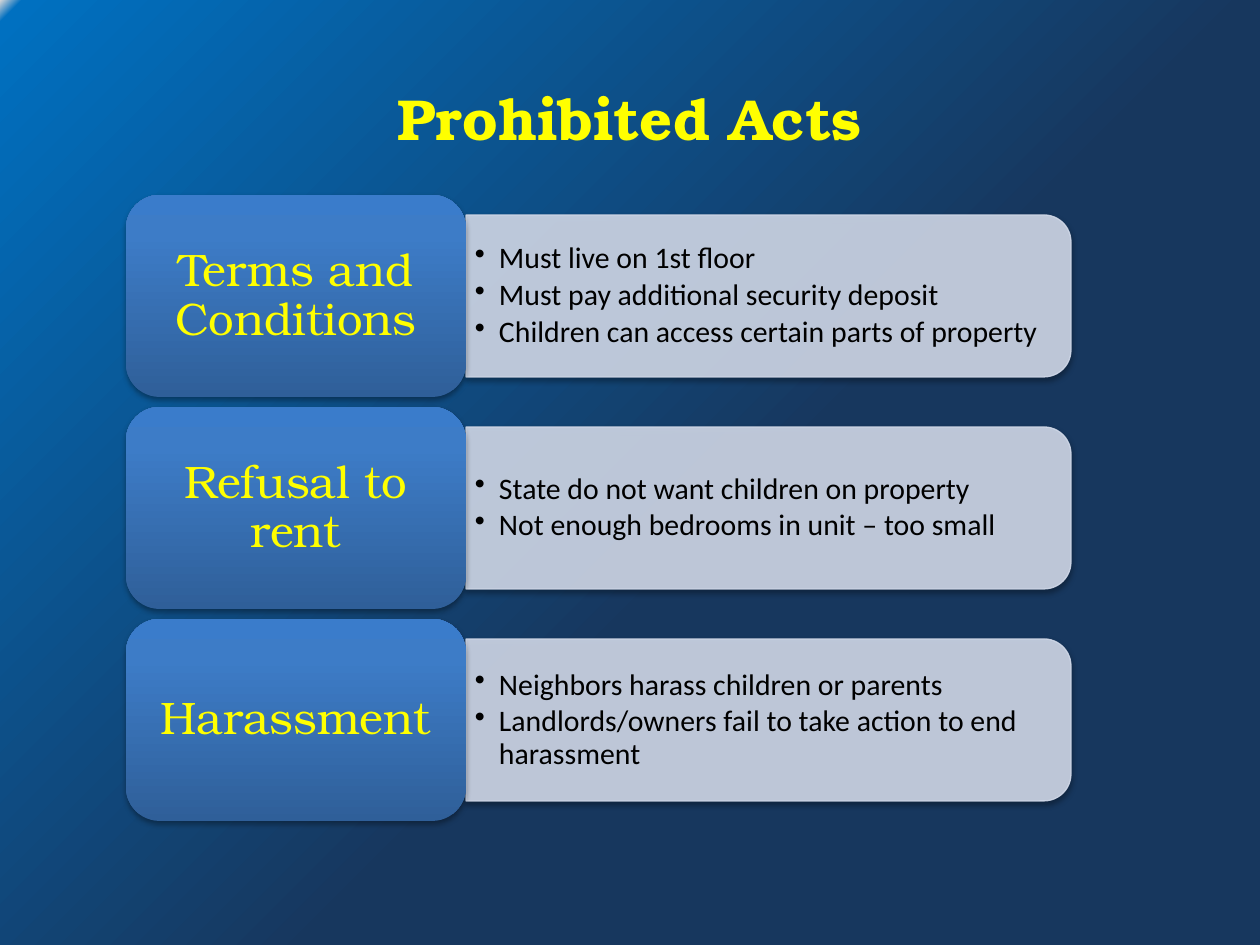
from dataclasses import dataclass

from lxml import etree
from pptx import Presentation
from pptx import util as u
from pptx.dml.color import RGBColor
from pptx.enum import shapes, text
from pptx.oxml.ns import qn

EMU_PER_PX = 914400 / 126
TITLE_ONLY = 5

YELLOW = RGBColor(0xFF, 0xFF, 0x00)
BLACK = RGBColor(0x00, 0x00, 0x00)
PANEL = RGBColor(0xD0, 0xD8, 0xE8)
BACKGROUND_STOPS = [
    (43, RGBColor(0x17, 0x37, 0x5E)),
    (99, RGBColor(0x00, 0x70, 0xC0)),
    (100, RGBColor(0xD9, 0xD9, 0xD9)),
]
TAB_STOPS = [
    (0, RGBColor(0x2F, 0x5F, 0x99)),
    (80, RGBColor(0x3D, 0x7C, 0xC7)),
    (100, RGBColor(0x3A, 0x7C, 0xCB)),
]
DISPLAY_FONT = "TeX Gyre Bonum"
BODY_FONT = "Calibri"

TAB_LEFT, FIRST_TOP, TAB_WIDTH, TAB_HEIGHT = 126, 195, 340, 202
ROW_PITCH = 212
PANEL_LEFT = TAB_LEFT + TAB_WIDTH
PANEL_WIDTH, PANEL_HEIGHT = 605, 162
LIST_WIDTH, LIST_HEIGHT = 597, 146
BULLET_INDENT = 24


@dataclass(frozen=True)
class ProhibitedAct:
    name: str
    examples: tuple[str, ...]


ACTS = [
    ProhibitedAct("Terms and Conditions", (
        "Must live on 1st floor",
        "Must pay additional security deposit",
        "Children can access certain parts of property",
    )),
    ProhibitedAct("Refusal to rent", (
        "State do not want children on property",
        "Not enough bedrooms in unit – too small",
    )),
    ProhibitedAct("Harassment", (
        "Neighbors harass children or parents",
        "Landlords/owners fail to take action to end harassment",
    )),
]


def px(length: float) -> u.Emu:
    return u.Emu(round(length * EMU_PER_PX))


def place(left: float, top: float, width: float, height: float) -> tuple[u.Emu, ...]:
    return px(left), px(top), px(width), px(height)


def set_gradient(fill, element, stops, angle: int) -> None:
    """Fill with any number of stops; the angle runs counterclockwise."""
    fill.gradient()
    fill.gradient_angle = angle
    stop_list = next(element.iter(qn("a:gsLst")))
    for stop in list(stop_list):
        stop_list.remove(stop)
    for percent, color in stops:
        stop = etree.SubElement(stop_list, qn("a:gs"), pos=str(percent * 1000))
        etree.SubElement(stop, qn("a:srgbClr"), val=str(color))


def add_shadow(shape) -> None:
    shape.shadow.inherit = False
    effects = next(shape._element.iter(qn("a:effectLst")))
    shadow = etree.SubElement(effects, qn("a:outerShdw"), blurRad="40000",
                              dist="23000", dir="5400000", rotWithShape="0")
    color = etree.SubElement(shadow, qn("a:srgbClr"), val=str(BLACK))
    etree.SubElement(color, qn("a:alpha"), val="35000")


def set_frame(frame, side: int, end: int) -> None:
    frame.word_wrap = True
    frame.vertical_anchor = text.MSO_ANCHOR.MIDDLE
    frame.margin_left = frame.margin_right = px(side)
    frame.margin_top = frame.margin_bottom = px(end)


def set_font(para, name: str, size: int, color: RGBColor) -> None:
    para.font.name = name
    para.font.size = u.Pt(size)
    para.font.color.rgb = color


def add_title(page, words: str) -> None:
    title = page.shapes.title
    title.left, title.top, title.width, title.height = place(63, 38, 1134, 158)
    title.text_frame.text = words
    title.text_frame.vertical_anchor = text.MSO_ANCHOR.MIDDLE
    para = title.text_frame.paragraphs[0]
    para.alignment = text.PP_ALIGN.CENTER
    set_font(para, DISPLAY_FONT, 33, YELLOW)
    para.font.bold = True


def add_panel(page, middle: int) -> None:
    """Add a panel, turned so that its two round corners face right."""
    panel = page.shapes.add_shape(
        shapes.MSO_SHAPE.ROUND_2_SAME_RECTANGLE,
        *place(PANEL_LEFT + (PANEL_WIDTH - PANEL_HEIGHT) / 2, middle - PANEL_WIDTH / 2,
               PANEL_HEIGHT, PANEL_WIDTH))
    panel.rotation = 90
    panel.fill.solid()
    panel.fill.fore_color.rgb = PANEL
    panel.line.color.rgb = PANEL
    panel.line.width = u.Pt(0.75)
    for color in panel._element.spPr.iter(qn("a:srgbClr")):
        etree.SubElement(color, qn("a:alpha"), val="90000")
    add_shadow(panel)


def add_examples(page, middle: int, examples: tuple[str, ...]) -> None:
    box = page.shapes.add_textbox(
        *place(PANEL_LEFT, middle - LIST_HEIGHT / 2, LIST_WIDTH, LIST_HEIGHT))
    frame = box.text_frame
    set_frame(frame, side=9, end=5)
    for index, example in enumerate(examples):
        para = frame.add_paragraph() if index else frame.paragraphs[0]
        para.text = example
        para.level = 1
        properties = para._p.get_or_add_pPr()
        properties.set("marL", str(px(BULLET_INDENT)))
        properties.set("indent", str(-px(BULLET_INDENT)))
        etree.SubElement(properties, qn("a:buChar"), char="•")
        para.line_spacing = 0.9
        para.space_after = u.Pt(2.6)
        set_font(para, BODY_FONT, 17, BLACK)


def add_tab(page, top: int, name: str) -> None:
    tab = page.shapes.add_shape(shapes.MSO_SHAPE.ROUNDED_RECTANGLE,
                                *place(TAB_LEFT, top, TAB_WIDTH, TAB_HEIGHT))
    set_gradient(tab.fill, tab._element, TAB_STOPS, 90)
    tab.line.fill.background()
    add_shadow(tab)
    set_frame(tab.text_frame, side=14, end=7)
    para = tab.text_frame.paragraphs[0]
    para.text = name
    para.alignment = text.PP_ALIGN.CENTER
    para.line_spacing = 0.9
    set_font(para, DISPLAY_FONT, 26, YELLOW)


def main() -> None:
    deck = Presentation()
    deck.slide_width, deck.slide_height = px(1260), px(945)
    page = deck.slides.add_slide(deck.slide_layouts[TITLE_ONLY])
    set_gradient(page.background.fill, page._element, BACKGROUND_STOPS, 135)
    add_title(page, "Prohibited Acts")
    for row, act in enumerate(ACTS):
        top = FIRST_TOP + row * ROW_PITCH
        middle = top + TAB_HEIGHT // 2
        add_panel(page, middle)
        add_examples(page, middle, act.examples)
        add_tab(page, top, act.name)
    deck.save("out.pptx")


if __name__ == "__main__":
    main()
